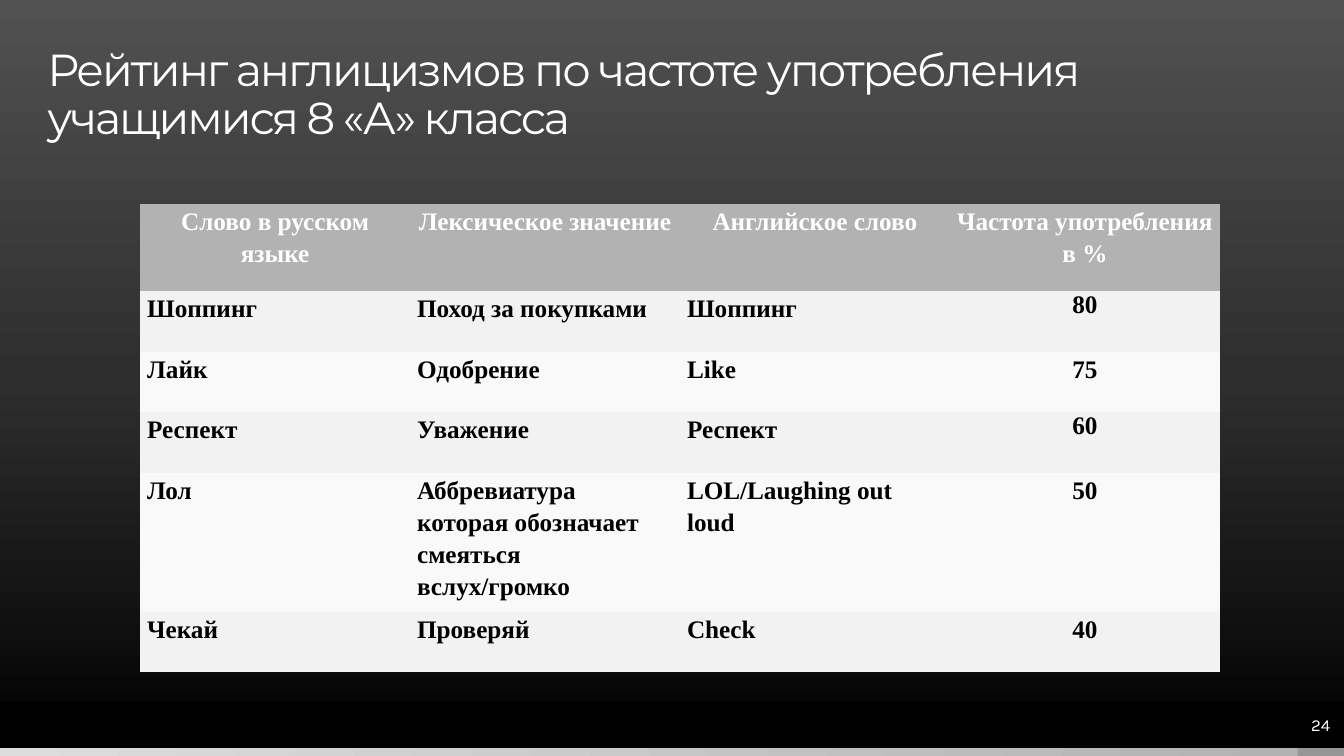
from copy import deepcopy

from pptx import Presentation
from pptx.dml.color import RGBColor
from pptx.enum.shapes import MSO_SHAPE
from pptx.enum.text import MSO_ANCHOR, PP_ALIGN
from pptx.oxml.ns import qn
from pptx.util import Inches, Pt

RECTANGLE = MSO_SHAPE.RECTANGLE
MIDDLE = MSO_ANCHOR.MIDDLE
LEFT, CENTER = PP_ALIGN.LEFT, PP_ALIGN.CENTER

WHITE = RGBColor(0xFF, 0xFF, 0xFF)
BLACK = RGBColor(0, 0, 0)
CHARCOAL = RGBColor(0x51, 0x51, 0x51)
DARK_GRAY = RGBColor(0x2E, 0x2E, 0x2E)
MID_GRAY = RGBColor(0x96, 0x96, 0x96)
HEADER_GRAY = RGBColor(0xB2, 0xB2, 0xB2)
LIGHT_GRAY = RGBColor(0xDD, 0xDD, 0xDD)
BANDS = (RGBColor(0xF2, 0xF2, 0xF2), RGBColor(0xF9, 0xF9, 0xF9))

SLIDE_WIDTH, SLIDE_HEIGHT = 13.33, 7.5
FOOTER_HEIGHT, STRIP_HEIGHT = 0.46, 0.08
PLAIN_TABLE_STYLE = "{2D5ABB26-0587-4C30-8999-92F81FD0307C}"

TITLE = "Рейтинг англицизмов по частоте употребления учащимися 8 «А» класса"
HEADINGS = ("Слово в русском языке", "Лексическое значение",
            "Английское слово", "Частота употребления в %")
WORDS = (
    ("Шоппинг", "Поход за покупками", "Шоппинг", "80"),
    ("Лайк", "Одобрение", "Like", "75"),
    ("Респект", "Уважение", "Респект", "60"),
    ("Лол", "Аббревиатура которая обозначает смеяться вслух/громко",
     "LOL/Laughing out loud", "50"),
    ("Чекай", "Проверяй", "Check", "40"),
)
SINGLE_SPACED = ("80", "60")


def write(frame, text, font, size, color, bold=False, align=LEFT,
          line_spacing=1.0, letter_spacing=None):
    para = frame.paragraphs[0]
    para.alignment = align
    para.line_spacing = line_spacing
    span = para.add_run()
    span.text = text
    span.font.name = font
    span.font.size = Pt(size)
    span.font.bold = bold
    span.font.color.rgb = color
    if letter_spacing is not None:
        span.font._element.set("spc", str(int(letter_spacing * 100)))


def clear_margins(frame):
    frame.margin_left = frame.margin_right = 0
    frame.margin_top = frame.margin_bottom = 0
    frame.word_wrap = True


def fill_gradient(fill, element, colors, angle):
    """Spread the colours evenly; element is the XML that holds the fill."""
    fill.gradient()
    fill.gradient_angle = angle
    stop_list = element.find(".//" + qn("a:gsLst"))
    while len(stop_list) < len(colors):
        stop_list.append(deepcopy(stop_list[-1]))
    for index, (stop, color) in enumerate(zip(fill.gradient_stops, colors)):
        stop.color.rgb = color
        stop.position = index / (len(colors) - 1)


def add_bar(page, left, top, width, height, *colors):
    bar = page.shapes.add_shape(RECTANGLE, Inches(left), Inches(top),
                                Inches(width), Inches(height))
    bar.shadow.inherit = False
    bar.line.fill.background()
    if len(colors) > 1:
        fill_gradient(bar.fill, bar.element, colors, 0)
    else:
        bar.fill.solid()
        bar.fill.fore_color.rgb = colors[0]
    return bar


def add_footer(page, left, top, width, number):
    strip_top = top + FOOTER_HEIGHT
    corner = left + width - FOOTER_HEIGHT
    add_bar(page, left, top, width, FOOTER_HEIGHT, BLACK)
    add_bar(page, left, strip_top, width - FOOTER_HEIGHT, STRIP_HEIGHT,
            LIGHT_GRAY, HEADER_GRAY)
    add_bar(page, corner, strip_top, FOOTER_HEIGHT, STRIP_HEIGHT, MID_GRAY)
    badge = add_bar(page, corner, top, FOOTER_HEIGHT, FOOTER_HEIGHT, BLACK)
    clear_margins(badge.text_frame)
    badge.text_frame.vertical_anchor = MIDDLE
    write(badge.text_frame, number, "Karla", 12, WHITE, align=CENTER)


def add_title(page, left, top, width, height):
    box = page.shapes.add_textbox(Inches(left), Inches(top),
                                  Inches(width), Inches(height))
    clear_margins(box.text_frame)
    write(box.text_frame, TITLE, "Montserrat", 32, WHITE,
          line_spacing=0.9, letter_spacing=-1.5)


def fill_cell(cell, text, background, color, align):
    cell.margin_left = cell.margin_right = Inches(0.07)
    cell.margin_top = cell.margin_bottom = 0
    cell.fill.solid()
    cell.fill.fore_color.rgb = background
    write(cell.text_frame, text, "Times New Roman", 18, color, bold=True,
          align=align, line_spacing=1.0 if text in SINGLE_SPACED else 1.15)


def add_rating_table(page, left, top, width, header_height, row_height):
    rows = (HEADINGS,) + WORDS
    height = header_height + row_height * len(WORDS)
    table = page.shapes.add_table(len(rows), len(HEADINGS), Inches(left), Inches(top),
                                  Inches(width), Inches(height)).table
    table._tbl.tblPr.find(qn("a:tableStyleId")).text = PLAIN_TABLE_STYLE
    for row_index, texts in enumerate(rows):
        is_header = row_index == 0
        table.rows[row_index].height = Inches(header_height if is_header else row_height)
        background = HEADER_GRAY if is_header else BANDS[(row_index - 1) % 2]
        for column, text in enumerate(texts):
            centered = is_header or column == len(HEADINGS) - 1
            fill_cell(table.cell(row_index, column), text, background,
                      WHITE if is_header else BLACK, CENTER if centered else LEFT)


def main():
    deck = Presentation()
    deck.slide_width = Inches(SLIDE_WIDTH)
    deck.slide_height = Inches(SLIDE_HEIGHT)
    page = deck.slides.add_slide(deck.slide_layouts[6])
    fill_gradient(page.background.fill, page.element, (CHARCOAL, DARK_GRAY, BLACK), 270)
    footer_top = SLIDE_HEIGHT - STRIP_HEIGHT - FOOTER_HEIGHT
    add_footer(page, 0, footer_top, SLIDE_WIDTH, "24")
    add_title(page, 0.47, 0.47, 12.4, 0.47)
    add_rating_table(page, 1.39, 2.02, 10.71, 0.87, 0.6)
    deck.save("out.pptx")


if __name__ == "__main__":
    main()
